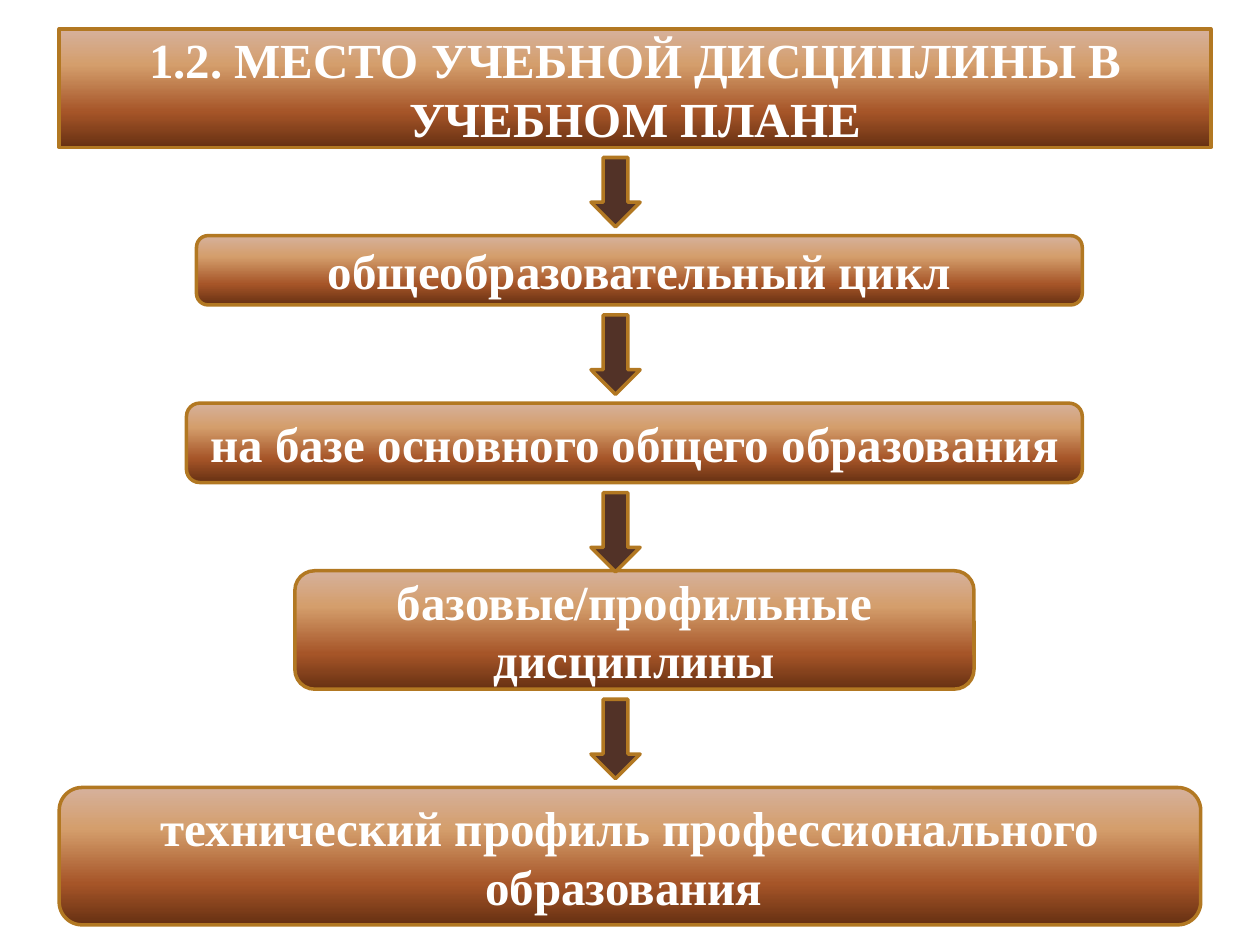
import copy
import dataclasses

import lxml.etree
import pptx
import pptx.dml.color
import pptx.enum.shapes
import pptx.enum.text
import pptx.oxml.ns
import pptx.util

Inches = pptx.util.Inches
Shapes = pptx.enum.shapes.MSO_SHAPE
qn = pptx.oxml.ns.qn

BORDER = "B27822"
ARROW_FILL = "523227"
GRADIENT = [(0, "D6B19C"), (0.3, "D49E6C"), (0.7, "A65528"), (1, "663012")]
ARROW_LEFT, ARROW_WIDTH = 4.69, 0.39


@dataclasses.dataclass
class Step:
    text: str
    left: float
    top: float
    width: float
    height: float


@dataclasses.dataclass
class Arrow:
    top: float
    height: float


TITLE = Step("1.2. МЕСТО УЧЕБНОЙ ДИСЦИПЛИНЫ В УЧЕБНОМ ПЛАНЕ", 0.47, 0.23, 9.14, 0.94)
STEPS = [
    Step("общеобразовательный цикл", 1.56, 1.87, 7.03, 0.55),
    Step("на базе основного общего образования", 1.48, 3.2, 7.11, 0.63),
    Step("базовые/профильные дисциплины", 2.34, 4.53, 5.39, 0.94),
    Step("технический профиль профессионального образования ", 0.47, 6.25, 9.06, 1.09),
]
ARROWS = [Arrow(1.25, 0.55), Arrow(2.5, 0.63), Arrow(3.91, 0.63), Arrow(5.55, 0.63)]


def color(value: str) -> pptx.dml.color.RGBColor:
    return pptx.dml.color.RGBColor.from_string(value)


def set_all(target, values: dict) -> None:
    for name, value in values.items():
        setattr(target, name, value)


def outline(shape) -> None:
    shape.line.color.rgb = color(BORDER)
    shape.line.width = pptx.util.Pt(2)


def fill_gradient(shape) -> None:
    shape.fill.gradient()
    shape.fill.gradient_angle = 270  # counter-clockwise, so top to bottom
    stop_list = shape._element.spPr.find(qn("a:gradFill")).find(qn("a:gsLst"))
    while len(stop_list) < len(GRADIENT):
        stop_list.append(copy.deepcopy(stop_list[0]))
    for stop, (position, value) in zip(shape.fill.gradient_stops, GRADIENT):
        stop.position = position
        stop.color.rgb = color(value)


def format_step(box, step: Step) -> None:
    fill_gradient(box)
    outline(box)
    set_all(box.text_frame, {
        "text": step.text,
        "word_wrap": True,
        "auto_size": pptx.enum.text.MSO_AUTO_SIZE.NONE,
        "vertical_anchor": pptx.enum.text.MSO_ANCHOR.MIDDLE,
    })
    para = box.text_frame.paragraphs[0]
    para.alignment = pptx.enum.text.PP_ALIGN.CENTER
    span = para.runs[0]
    set_all(span.font, {"name": "Times New Roman", "size": pptx.util.Pt(28), "bold": True})
    span.font.color.rgb = color("FFFFFF")


def draw_title(page, step: Step) -> None:
    box = page.shapes.title
    for name in ("left", "top", "width", "height"):
        setattr(box, name, Inches(getattr(step, name)))
    # Give the placeholder a rounded outline, right after its position
    geometry = lxml.etree.Element(qn("a:prstGeom"), prst="roundRect")
    lxml.etree.SubElement(geometry, qn("a:avLst"))
    box._element.spPr.insert(1, geometry)
    format_step(box, step)


def draw_step(page, step: Step) -> None:
    box = page.shapes.add_shape(
        Shapes.ROUNDED_RECTANGLE, Inches(step.left), Inches(step.top),
        Inches(step.width), Inches(step.height))
    box.shadow.inherit = False
    format_step(box, step)


def draw_arrow(page, arrow: Arrow) -> None:
    shape = page.shapes.add_shape(
        Shapes.DOWN_ARROW, Inches(ARROW_LEFT), Inches(arrow.top),
        Inches(ARROW_WIDTH), Inches(arrow.height))
    shape.shadow.inherit = False
    shape.fill.solid()
    shape.fill.fore_color.rgb = color(ARROW_FILL)
    outline(shape)


def main() -> None:
    deck = pptx.Presentation()
    set_all(deck, {"slide_width": Inches(10), "slide_height": Inches(7.5)})
    page = deck.slides.add_slide(deck.slide_layouts[5])  # title only

    # Boxes first, arrows on top
    draw_title(page, TITLE)
    for step in STEPS:
        draw_step(page, step)
    for arrow in ARROWS:
        draw_arrow(page, arrow)

    deck.save("out.pptx")


if __name__ == "__main__":
    main()
